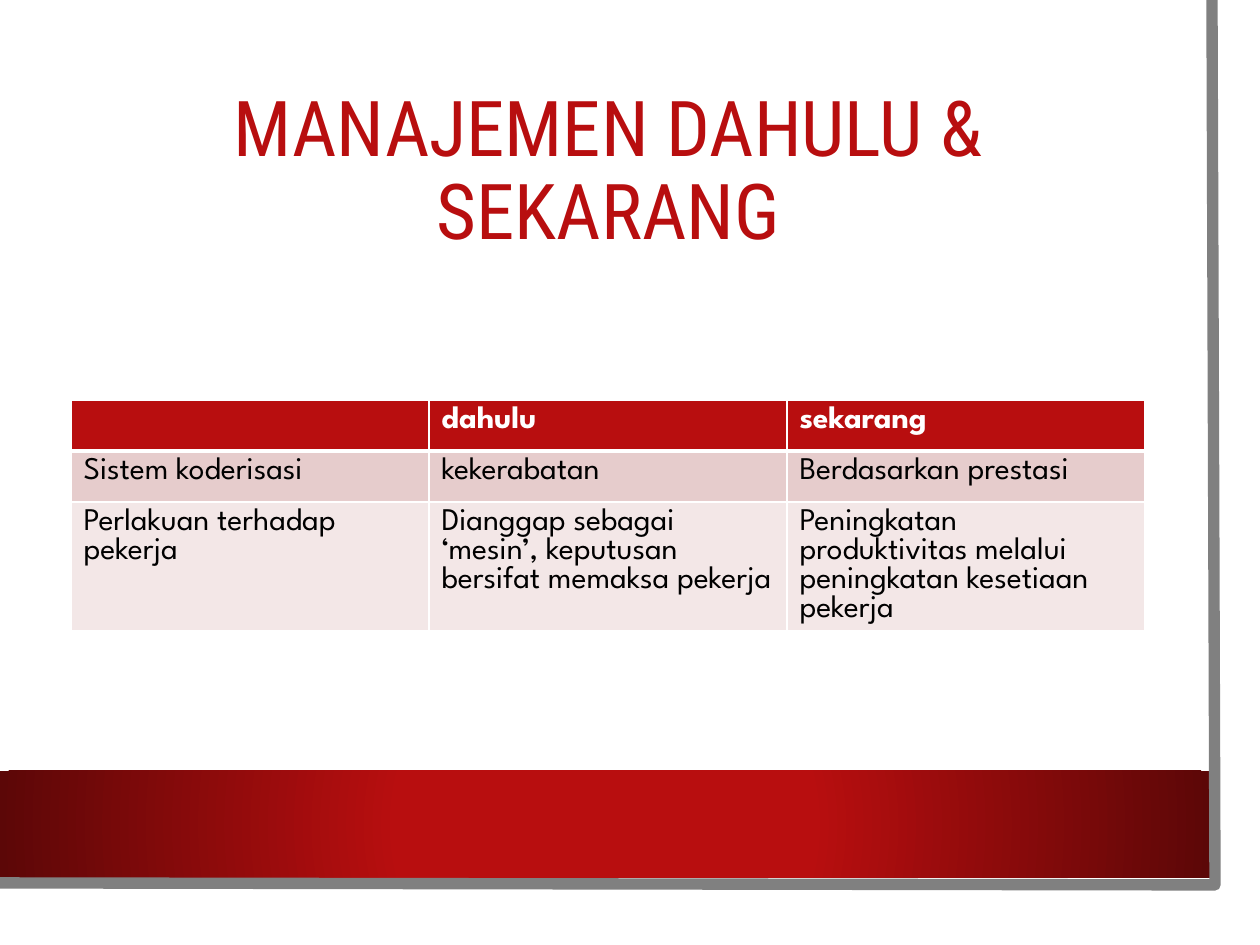
from lxml import etree
from pptx import Presentation
from pptx.dml.color import RGBColor
from pptx.enum.shapes import MSO_SHAPE
from pptx.enum.text import MSO_ANCHOR, MSO_AUTO_SIZE, PP_ALIGN
from pptx.oxml import parse_xml
from pptx.oxml.ns import nsdecls, qn
from pptx.util import Emu, Pt

EMU_PER_PX = 914400 / 126
RED = RGBColor(0xB8, 0x0E, 0x0F)
DARK_RED = RGBColor(0x5C, 0x07, 0x07)
ROSE = RGBColor(0xE6, 0xCC, 0xCC)
PALE_ROSE = RGBColor(0xF3, 0xE7, 0xE7)
GRAY = RGBColor(0x80, 0x80, 0x80)
WHITE = RGBColor(0xFF, 0xFF, 0xFF)
BLACK = RGBColor(0x00, 0x00, 0x00)

TITLE_FONT = "Roboto Condensed"
BODY_FONT = "League Spartan"
ROWS = [
    ["", "dahulu", "sekarang"],
    ["Sistem koderisasi", "kekerabatan", "Berdasarkan prestasi"],
    [
        "Perlakuan terhadap pekerja",
        "Dianggap sebagai ‘mesin’, keputusan bersifat memaksa pekerja",
        "Peningkatan produktivitas melalui peningkatan kesetiaan pekerja",
    ],
]
ROW_HEIGHTS = [51, 51, 101]
ROW_FILLS = [RED, ROSE, PALE_ROSE]


def px(length):
    return Emu(round(length * EMU_PER_PX))


def add_run(paragraph, text, font_name, size, color, bold=False):
    run = paragraph.add_run()
    run.text = text
    run.font.name = font_name
    run.font.size = Pt(size)
    run.font.bold = bold
    run.font.color.rgb = color


def add_rectangle(slide, left, top, width, height):
    shape = slide.shapes.add_shape(
        MSO_SHAPE.RECTANGLE, px(left), px(top), px(width), px(height)
    )
    shape.shadow.inherit = False
    shape.line.fill.background()
    return shape


def fill_radial(shape, inner, inner_position, outer):
    shape.fill.background()
    gradient = parse_xml(
        f'<a:gradFill {nsdecls("a")} rotWithShape="1"><a:gsLst>'
        f'<a:gs pos="{inner_position * 1000}"><a:srgbClr val="{inner}"/></a:gs>'
        f'<a:gs pos="100000"><a:srgbClr val="{outer}"/></a:gs></a:gsLst>'
        '<a:path path="circle">'
        '<a:fillToRect l="50000" t="50000" r="50000" b="50000"/>'
        "</a:path></a:gradFill>"
    )
    properties = shape.element.spPr
    properties.replace(properties.find(qn("a:noFill")), gradient)


def add_backdrop(slide, left, top, width, height):
    panel = add_rectangle(slide, left, top, width, height)
    panel.fill.solid()
    panel.fill.fore_color.rgb = WHITE

    band = add_rectangle(slide, left, top + 771, width - 29, 107)
    fill_radial(band, RED, 34, DARK_RED)

    builder = slide.shapes.build_freeform(left + 1212, top, scale=EMU_PER_PX)
    builder.add_line_segments(
        [(left + 1215, top + 885), (left - 3, top + 883)], close=False
    )
    edge = builder.convert_to_shape()
    edge.shadow.inherit = False
    edge.fill.background()
    edge.line.color.rgb = GRAY
    edge.line.width = Pt(6.5)
    return edge


def place_title(slide, text, left, top, width, height):
    title = slide.shapes.title
    title.left, title.top = px(left), px(top)
    title.width, title.height = px(width), px(height)
    frame = title.text_frame
    frame.word_wrap = True
    frame.auto_size = MSO_AUTO_SIZE.NONE
    frame.vertical_anchor = MSO_ANCHOR.MIDDLE
    paragraph = frame.paragraphs[0]
    paragraph.alignment = PP_ALIGN.CENTER
    paragraph.line_spacing = 0.9
    add_run(paragraph, text, TITLE_FONT, 44, RED)
    return title


def set_border(cell, side, color, width):
    properties = cell._tc.get_or_add_tcPr()
    line = etree.SubElement(properties, qn(f"a:{side}"), w=str(Pt(width)))
    fill = etree.SubElement(line, qn("a:solidFill"))
    etree.SubElement(fill, qn("a:srgbClr"), val=str(color))


def add_comparison(slide, left, top, width):
    table = slide.shapes.add_table(
        len(ROWS), len(ROWS[0]), px(left), px(top), px(width), px(sum(ROW_HEIGHTS))
    ).table
    table.horz_banding = False
    for column in table.columns:
        column.width = px(width / len(ROWS[0]))
    for row_index, texts in enumerate(ROWS):
        table.rows[row_index].height = px(ROW_HEIGHTS[row_index])
        is_header = row_index == 0
        for column_index, text in enumerate(texts):
            cell = table.cell(row_index, column_index)
            border_widths = {
                "lnL": 1,
                "lnR": 1,
                "lnT": 3 if row_index == 1 else 1,
                "lnB": 3 if is_header else 1,
            }
            for side, border_width in border_widths.items():
                set_border(cell, side, WHITE, border_width)
            cell.fill.solid()
            cell.fill.fore_color.rgb = ROW_FILLS[row_index]
            if text:
                add_run(
                    cell.text_frame.paragraphs[0],
                    text,
                    BODY_FONT,
                    18,
                    WHITE if is_header else BLACK,
                    is_header,
                )


def main():
    presentation = Presentation()
    presentation.slide_width = px(1260)
    presentation.slide_height = px(945)
    slide = presentation.slides.add_slide(presentation.slide_layouts[5])
    edge = add_backdrop(slide, 0, 0, 1239, 916)
    title = place_title(slide, "MANAJEMEN DAHULU & SEKARANG", 71, 94, 1075, 159)
    edge.element.addnext(title.element)
    add_comparison(slide, 71, 400, 1074)
    presentation.save("out.pptx")


if __name__ == "__main__":
    main()
